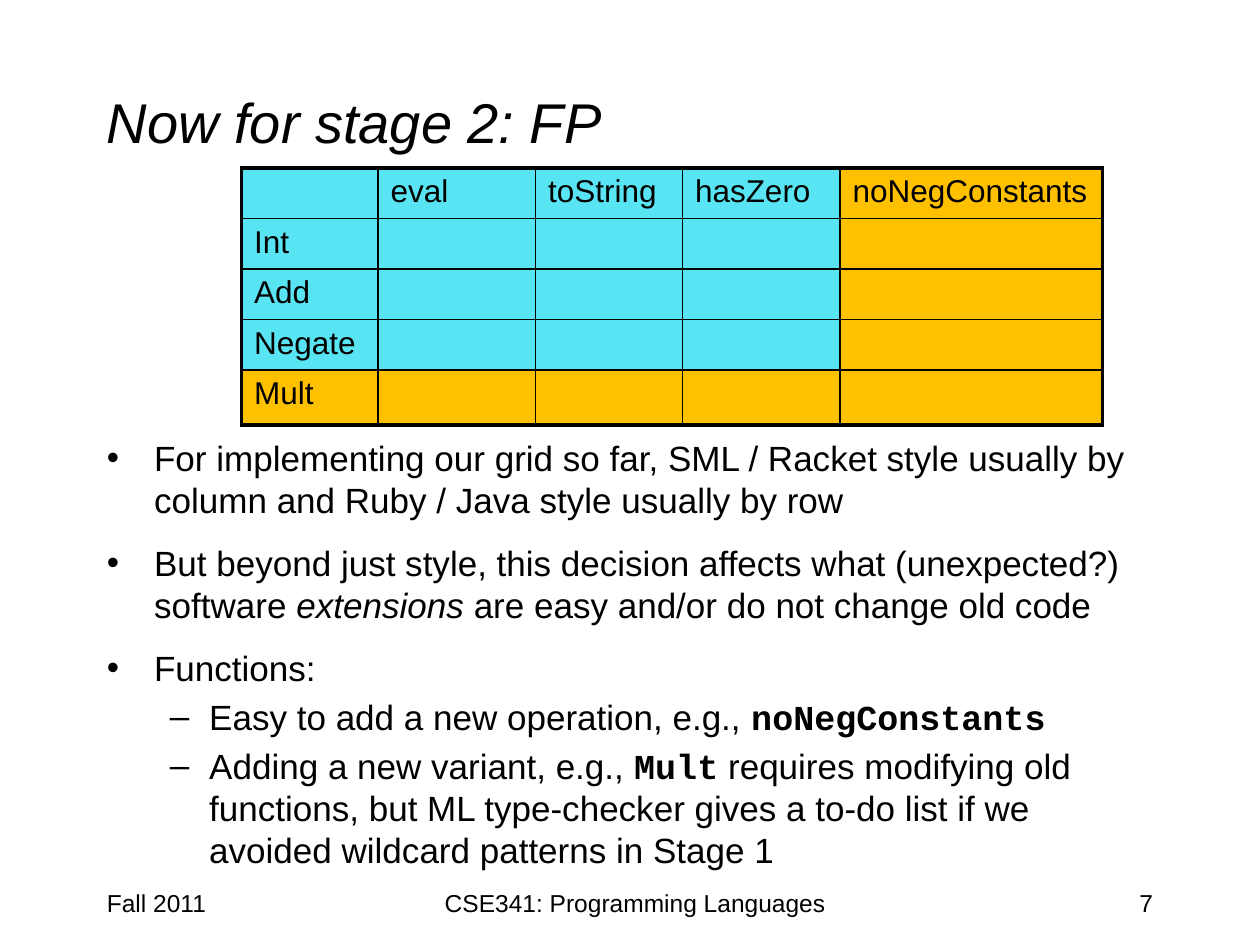
from lxml.etree import SubElement
from pptx import Presentation
from pptx.dml.color import RGBColor as RGB
from pptx.enum.text import MSO_ANCHOR as ANCHOR, PP_ALIGN as ALIGN
from pptx.oxml.ns import qn
from pptx.util import Pt

BLACK, CYAN, GOLD = "000000", "59E4F3", "FFC000"
CODE = {"name": "Courier New", "bold": True}
ITALIC = {"italic": True}
HEADERS = ["", "eval", "toString", "hasZero", "noNegConstants"]
VARIANTS = ["Int", "Add", "Negate", "Mult"]
COLS = [78, 90, 84, 90, 150]
ROWS = [27.7] * 4 + [31.5]
LEVELS = [("•", 27, -27), ("–", 58.5, -22.5)]
BULLETS = [
    (0, 4, [("For implementing our grid so far, SML / Racket style usually by "
             "column and Ruby / Java style usually by row", {})]),
    (0, 12, [("But beyond just style, this decision affects what (unexpected?) software ", {}),
             ("extensions", ITALIC),
             (" are easy and/or do not change old code", {})]),
    (0, 12, [("Functions:", {})]),
    (1, 4, [("Easy to add a new operation, e.g., ", {}), ("noNegConstants", CODE)]),
    (1, 4, [("Adding a new variant, e.g., ", {}), ("Mult", CODE),
            (" requires modifying old functions, but ML type-checker gives a to-do list "
             "if we avoided wildcard patterns in Stage 1", {})]),
]


def color(hex_value):
    return RGB.from_string(hex_value)


def add_run(p, text, size, **fmt):
    r = p.add_run()
    r.text = text
    for key, value in {"name": "Arial", "size": Pt(size), **fmt}.items():
        setattr(r.font, key, value)
    r.font.color.rgb = color(BLACK)


def add_box(s, left, top, width, height, anchor=ANCHOR.TOP):
    tf = s.shapes.add_textbox(Pt(left), Pt(top), Pt(width), Pt(height)).text_frame
    tf.word_wrap = True
    tf.vertical_anchor = anchor
    return tf


def add_label(s, text, box, size, align=ALIGN.LEFT, anchor=ANCHOR.TOP, **fmt):
    p = add_box(s, *box, anchor).paragraphs[0]
    p.alignment = align
    add_run(p, text, size, **fmt)


def add_bullets(s, box, items):
    tf = add_box(s, *box)
    for i, (level, before, runs) in enumerate(items):
        p = tf.add_paragraph() if i else tf.paragraphs[0]
        p.level = level
        p.space_before = Pt(before)
        char, margin, indent = LEVELS[level]
        pPr = p._p.get_or_add_pPr()
        pPr.set("marL", str(Pt(margin)))
        pPr.set("indent", str(Pt(indent)))
        SubElement(pPr, qn("a:buFont"), typeface="Arial")
        SubElement(pPr, qn("a:buChar"), char=char)
        for text, fmt in runs:
            add_run(p, text, 20, **fmt)


def set_borders(cell, widths):
    tcPr = cell._tc.get_or_add_tcPr()
    for side, width in zip("LRTB", widths):
        ln = SubElement(tcPr, qn(f"a:ln{side}"), w=str(Pt(width)))
        fill = SubElement(ln, qn("a:solidFill"))
        SubElement(fill, qn("a:srgbClr"), val=BLACK)


def add_grid(s, left, top):
    last_row, last_col = len(ROWS) - 1, len(COLS) - 1
    table = s.shapes.add_table(len(ROWS), len(COLS), Pt(left), Pt(top),
                               Pt(sum(COLS)), Pt(sum(ROWS))).table
    table.first_row = table.horz_banding = False
    for col, width in zip(table.columns, COLS):
        col.width = Pt(width)
    for row, height in zip(table.rows, ROWS):
        row.height = Pt(height)
    texts = [HEADERS] + [[name] + [""] * last_col for name in VARIANTS]
    for i, row in enumerate(texts):
        for j, text in enumerate(row):
            cell = table.cell(i, j)
            outer = (j == 0, j == last_col, i == 0, i == last_row)
            set_borders(cell, [2.25 if edge else 1 for edge in outer])
            cell.fill.solid()
            cell.fill.fore_color.rgb = color(GOLD if i == last_row or j == last_col else CYAN)
            if text:
                add_run(cell.text_frame.paragraphs[0], text, 18)


def main():
    prs = Presentation()
    prs.slide_width, prs.slide_height = Pt(720), Pt(540)
    s = prs.slides.add_slide(prs.slide_layouts[6])
    add_label(s, "Now for stage 2: FP", (54, 24, 612, 90), 32, anchor=ANCHOR.MIDDLE, italic=True)
    add_bullets(s, (54, 246, 612, 264), BULLETS)
    add_label(s, "Fall 2011", (54, 504, 150, 36), 14)
    add_label(s, "7", (516, 504, 150, 36), 14, ALIGN.RIGHT)
    add_label(s, "CSE341: Programming Languages", (228, 504, 270, 36), 14, ALIGN.CENTER)
    add_grid(s, 138, 96)
    prs.save("out.pptx")


if __name__ == "__main__":
    main()
